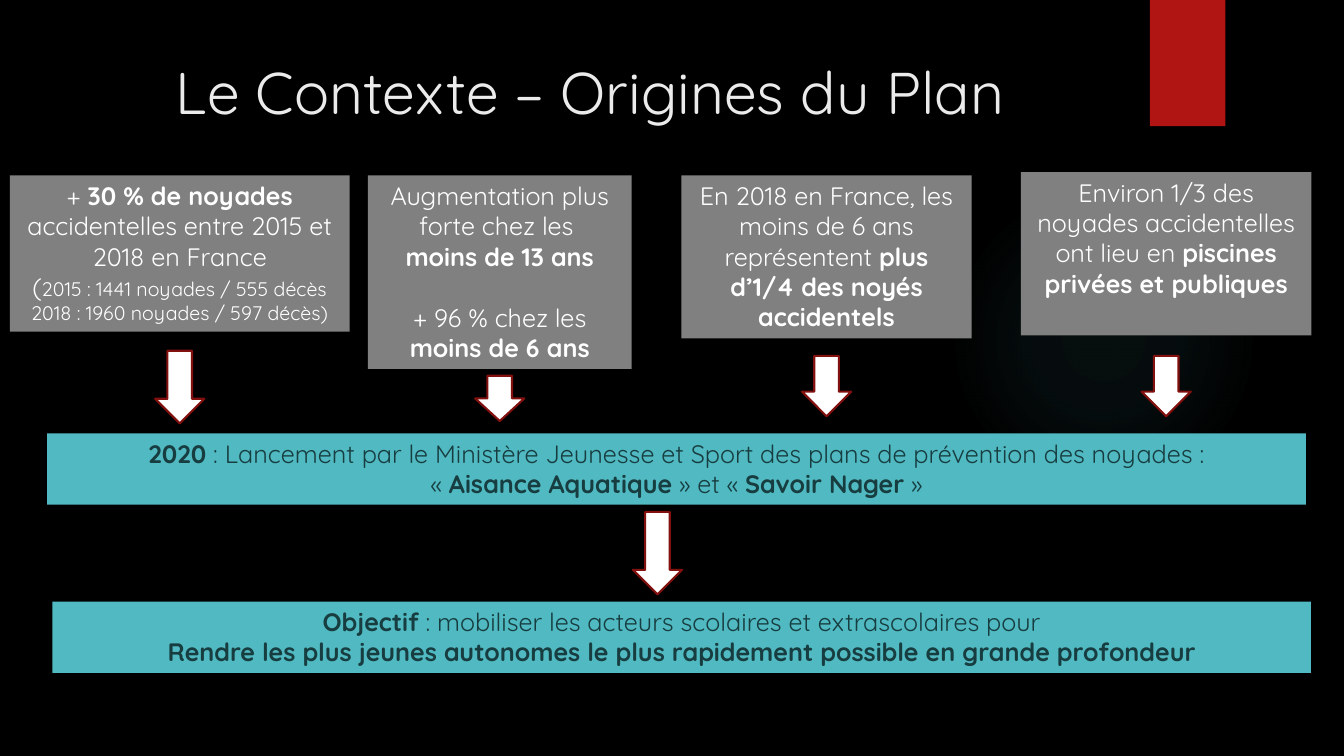
from dataclasses import dataclass

import lxml.etree
import pptx
import pptx.dml.color
import pptx.enum.shapes
import pptx.enum.text
import pptx.oxml
import pptx.oxml.ns
import pptx.util

Cm = pptx.util.Cm
Pt = pptx.util.Pt
SHAPES = pptx.enum.shapes.MSO_SHAPE


@dataclass(frozen=True)
class Theme:
    font: str = "Quicksand"
    background: str = "000000"
    title: str = "EBEBEB"
    ribbon: str = "B01513"
    card: str = "808080"
    card_text: str = "FFFFFF"
    bar: str = "50B9C1"
    bar_text: str = "173D40"
    arrow: str = "FFFFFF"
    arrow_line: str = "82100E"
    title_size: int = 42
    body_size: int = 18
    detail_size: int = 14
    paragraph_gap: int = 22


THEME = Theme()
ARROW_WIDTH = 1.24


@dataclass(frozen=True)
class Line:
    """One paragraph: (text, bold) pieces, its type size and space before."""
    pieces: tuple
    size: int = THEME.body_size
    gap: int = 0


# left, top, width, height, arrow top, arrow height, lines
CARDS = [
    (0.25, 4.42, 8.56, 3.94, 8.84, 1.83, [
        Line((("+ ", False), ("30 % de noyades ", True),
              ("accidentelles entre 2015 et 2018 en France", False))),
        Line((("(", False, THEME.body_size), ("2015 : 1441 noyades / 555 décès", False)),
             THEME.detail_size),
        Line((("2018 : 1960 noyades / 597 décès)", False),), THEME.detail_size)]),
    (9.27, 4.42, 6.65, 4.88, 9.47, 1.14, [
        Line((("Augmentation plus forte chez les ", False),)),
        Line((("moins de 13 ans", True),)),
        Line((("+ 96 % chez les ", False), ("moins de 6 ans", True)),
             gap=THEME.paragraph_gap)]),
    (17.17, 4.42, 7.32, 4.11, 8.97, 1.52, [
        Line((("En 2018 en France, les moins de 6 ans représentent ", False),
              ("plus d’1/4 des noyés accidentels", True)))]),
    (25.73, 4.34, 7.32, 4.11, 8.97, 1.52, [
        Line((("Environ 1/3 des noyades accidentelles ont lieu en ", False),
              ("piscines privées et publiques", True)))]),
]

# left, top, lines
BARS = [
    (1.19, 10.92, [
        Line((("2020", True),
              (" : Lancement par le Ministère Jeunesse et Sport des plans "
               "de prévention des noyades :", False))),
        Line((("« ", False), ("Aisance Aquatique", True), (" » et « ", False),
              ("Savoir Nager", True), (" »", False)))]),
    (1.32, 15.16, [
        Line((("Objectif", True),
              (" : mobiliser les acteurs scolaires et extrascolaires pour", False))),
        Line((("Rendre les plus jeunes autonomes le plus rapidement possible "
               "en grande profondeur", True),))]),
]


def rgb(color):
    return pptx.dml.color.RGBColor.from_string(color)


def add_shape(slide, kind, left, top, width, height, fill):
    shape = slide.shapes.add_shape(kind, Cm(left), Cm(top), Cm(width), Cm(height))
    shape.shadow.inherit = False
    shape.fill.solid()
    shape.fill.fore_color.rgb = rgb(fill)
    shape.line.fill.background()
    return shape


def format_paragraph(paragraph, size, color):
    paragraph.alignment = pptx.enum.text.PP_ALIGN.CENTER
    paragraph.font.name = THEME.font
    paragraph.font.size = Pt(size)
    paragraph.font.color.rgb = rgb(color)


def add_text_panel(slide, left, top, width, height, fill, color, lines):
    panel = add_shape(slide, SHAPES.RECTANGLE, left, top, width, height, fill)
    frame = panel.text_frame
    frame.word_wrap = True
    frame.vertical_anchor = pptx.enum.text.MSO_ANCHOR.TOP
    for index, line in enumerate(lines):
        paragraph = frame.add_paragraph() if index else frame.paragraphs[0]
        format_paragraph(paragraph, line.size, color)
        if line.gap:
            paragraph.space_before = Pt(line.gap)
        for text, bold, *size in line.pieces:
            run = paragraph.add_run()
            run.text = text
            run.font.bold = bold
            if size:
                run.font.size = Pt(size[0])


def add_down_arrow(slide, center, top, height):
    arrow = add_shape(slide, SHAPES.DOWN_ARROW, center - ARROW_WIDTH / 2, top,
                      ARROW_WIDTH, height, THEME.arrow)
    arrow.line.color.rgb = rgb(THEME.arrow_line)
    arrow.line.width = Pt(1.5)


def add_glow(slide):
    """Add a faint disc that fades out from its centre."""
    glow = add_shape(slide, SHAPES.OVAL, 23.9, 4.65, 7.82, 7.82, THEME.bar)
    stops = "".join(
        f'<a:gs pos="{position * 1000}"><a:srgbClr val="{THEME.bar}">'
        f'<a:alpha val="{alpha * 1000}"/></a:srgbClr></a:gs>'
        for position, alpha in ((0, 7), (36, 6), (69, 0)))
    gradient = pptx.oxml.parse_xml(
        f'<a:gradFill {pptx.oxml.ns.nsdecls("a")}><a:gsLst>{stops}</a:gsLst>'
        '<a:path path="circle"><a:fillToRect l="50000" t="50000" r="50000" b="50000"/>'
        '</a:path></a:gradFill>')
    properties = glow.element.spPr
    solid = properties.find(pptx.oxml.ns.qn("a:solidFill"))
    properties.replace(solid, gradient)


def set_title(slide, text):
    title = slide.shapes.title
    title.left, title.top, title.width, title.height = (
        Cm(1.8), Cm(1.27), Cm(26.14), Cm(2.46))
    frame = title.text_frame
    frame.text = text
    frame.auto_size = pptx.enum.text.MSO_AUTO_SIZE.NONE
    frame.vertical_anchor = pptx.enum.text.MSO_ANCHOR.TOP
    format_paragraph(frame.paragraphs[0], THEME.title_size, THEME.title)


def main():
    presentation = pptx.Presentation()
    presentation.slide_width = Cm(33.87)
    presentation.slide_height = Cm(19.05)
    slide = presentation.slides.add_slide(presentation.slide_layouts[5])
    slide.background.fill.solid()
    slide.background.fill.fore_color.rgb = rgb(THEME.background)

    add_glow(slide)
    add_shape(slide, SHAPES.RECTANGLE, 28.98, 0, 1.9, 3.18, THEME.ribbon)
    set_title(slide, "Le Contexte – Origines du Plan")
    for left, top, width, height, arrow_top, arrow_height, lines in CARDS:
        add_text_panel(slide, left, top, width, height,
                       THEME.card, THEME.card_text, lines)
        add_down_arrow(slide, left + width / 2, arrow_top, arrow_height)
    for left, top, lines in BARS:
        add_text_panel(slide, left, top, 31.72, 1.8, THEME.bar, THEME.bar_text, lines)
    add_down_arrow(slide, 16.57, 12.9, 2.08)
    presentation.save("out.pptx")


if __name__ == "__main__":
    main()
